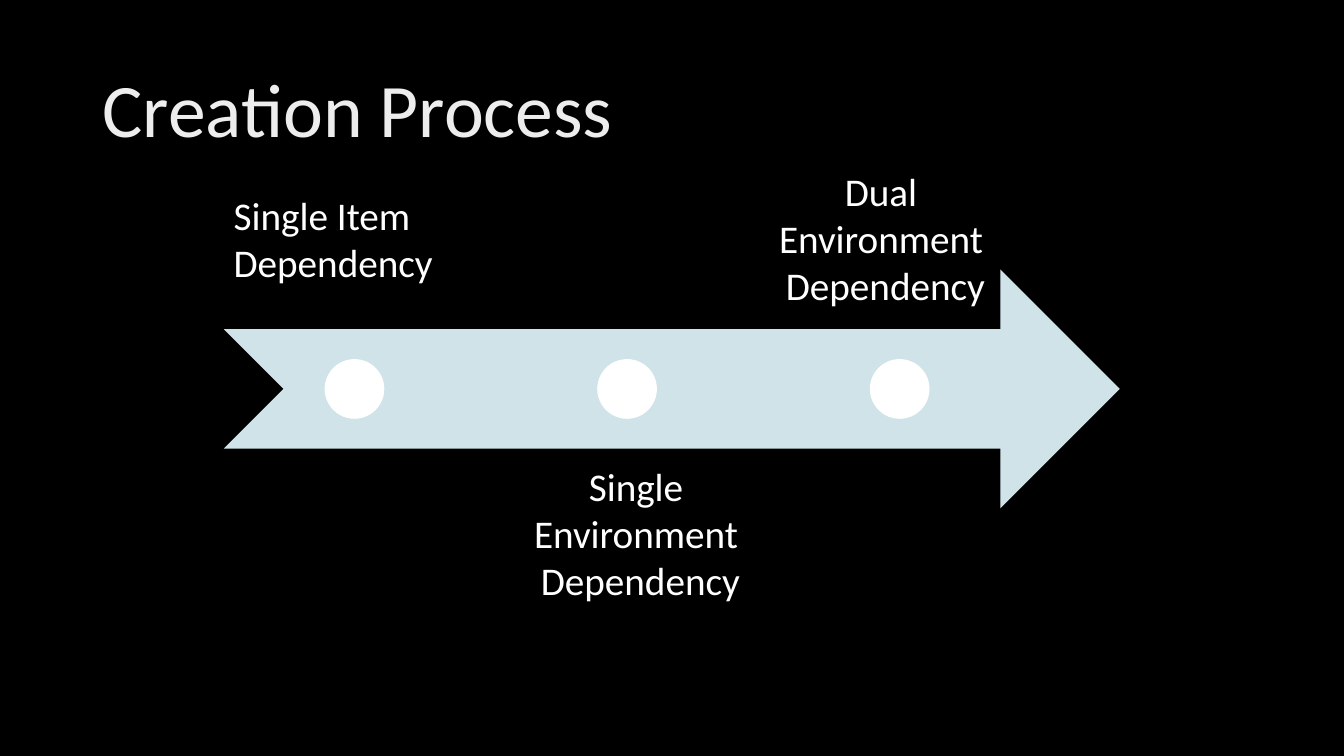
from pptx import Presentation
from pptx import util as u
from pptx.dml import color
from pptx.enum import shapes, text


def rgb(hex_value):
    """Turn a hex string into a colour."""
    return color.RGBColor.from_string(hex_value)


def box_cm(*lengths):
    """Turn left, top, width and height in centimetres into lengths."""
    return [u.Cm(length) for length in lengths]


def style(paragraph, size, hex_value, align):
    """Format a paragraph and its runs."""
    paragraph.alignment = align
    for run in paragraph.runs:
        run.font.name = "Calibri"
        run.font.size = u.Pt(size)
        run.font.color.rgb = rgb(hex_value)


def add_heading(slide, box, wording):
    """Place the slide title in its box."""
    heading = slide.shapes.title
    heading.left, heading.top, heading.width, heading.height = box_cm(*box)
    heading.text_frame.text = wording
    heading.text_frame.vertical_anchor = text.MSO_ANCHOR.MIDDLE
    paragraph = heading.text_frame.paragraphs[0]
    paragraph.line_spacing = 0.9
    style(paragraph, 54, "EDEDED", text.PP_ALIGN.LEFT)


def add_plain_shape(parent, preset, box, hex_value):
    """Add a flat shape without outline."""
    plain = parent.shapes.add_shape(preset, *box_cm(*box))
    plain.shadow.inherit = False
    plain.fill.solid()
    plain.fill.fore_color.rgb = rgb(hex_value)
    plain.line.fill.background()


def add_timeline(slide, box, stage_count):
    """Draw the notched arrow with one evenly spaced dot for each stage."""
    left, top, width, height = box
    dot, first, step = height / 4, 2.54, 6.87
    timeline = slide.shapes.add_group_shape()
    add_plain_shape(timeline, shapes.MSO_SHAPE.NOTCHED_RIGHT_ARROW, box, "CFE3E8")
    for stage in range(stage_count):
        dot_box = (left + first + stage * step, top + (height - dot) / 2, dot, dot)
        add_plain_shape(timeline, shapes.MSO_SHAPE.OVAL, dot_box, "FFFFFF")


def add_stage_label(slide, box, wording, align):
    """Write a stage name, one paragraph to a line."""
    frame = slide.shapes.add_textbox(*box_cm(*box)).text_frame
    frame.word_wrap = True
    frame.auto_size = text.MSO_AUTO_SIZE.SHAPE_TO_FIT_TEXT
    frame.text = wording
    for paragraph in frame.paragraphs:
        style(paragraph, 28, "FFFFFF", align)


def build_process_slide(deck):
    """Build the slide with the title, timeline and stage names."""
    slide = deck.slides.add_slide(deck.slide_layouts[5])
    slide.background.fill.solid()
    slide.background.fill.fore_color.rgb = rgb("000000")
    left, center = text.PP_ALIGN.LEFT, text.PP_ALIGN.CENTER
    stages = [
        ((5.64, 4.7, 5.69, 2.64), "Single Item\nDependency", left),
        ((12.98, 11.53, 6.32, 3.84), "Single \nEnvironment \nDependency", center),
        ((19.28, 4.09, 6.07, 3.84), "Dual \nEnvironment \nDependency", center),
    ]
    add_heading(slide, (2.33, 1.01, 29.21, 3.68), "Creation Process")
    add_timeline(slide, (5.64, 6.79, 22.58, 6.02), len(stages))
    for box, wording, align in stages:
        add_stage_label(slide, box, wording, align)


def main():
    """Create and save the presentation."""
    deck = Presentation()
    deck.slide_width, deck.slide_height = u.Cm(33.87), u.Cm(19.05)
    build_process_slide(deck)
    deck.save("out.pptx")


if __name__ == "__main__":
    main()
